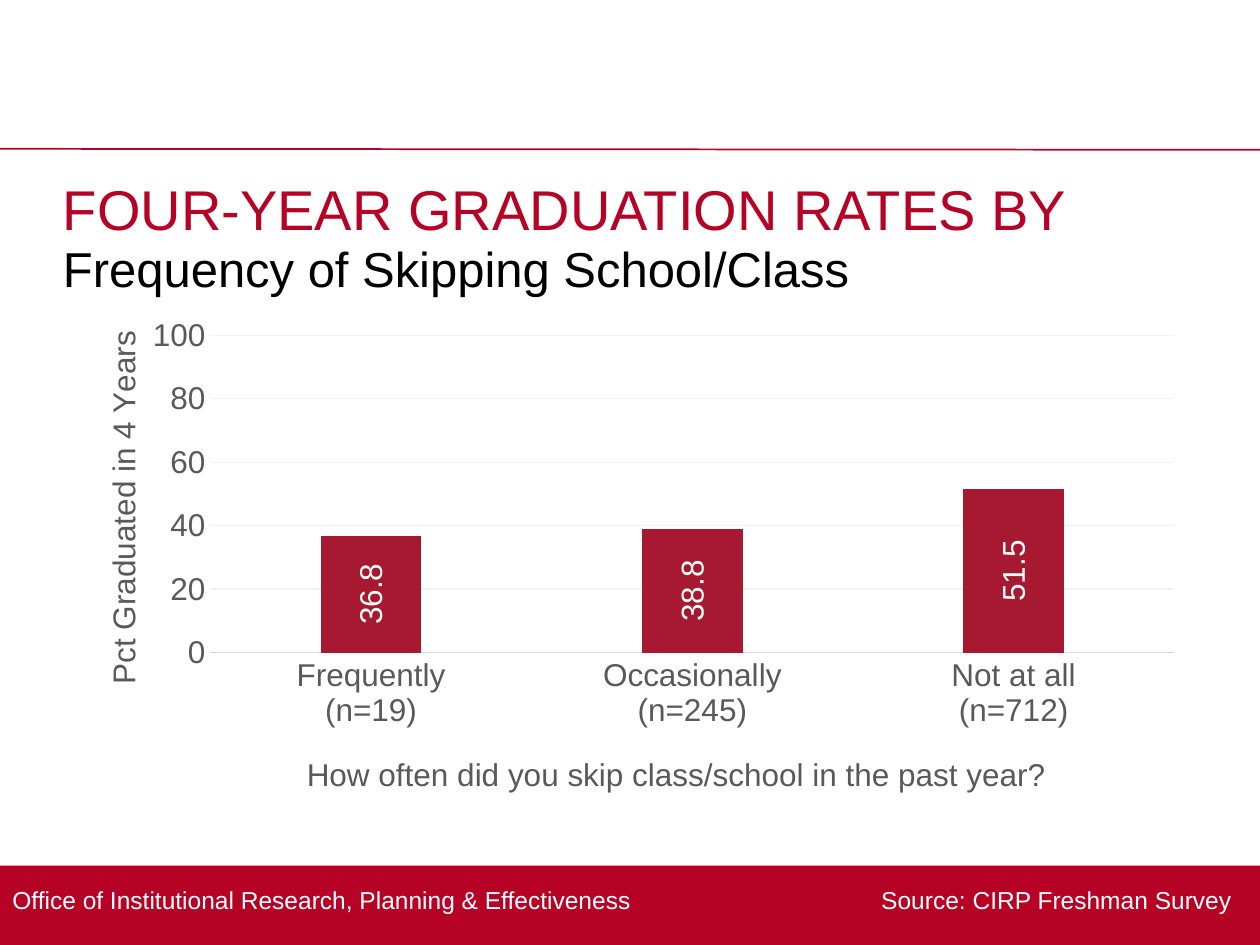
from pptx import Presentation
from pptx.chart.data import CategoryChartData
from pptx.dml.color import RGBColor
from pptx.enum.chart import XL_CHART_TYPE, XL_LABEL_POSITION, XL_TICK_MARK
from pptx.enum.shapes import MSO_CONNECTOR, MSO_SHAPE
from pptx.enum.text import MSO_ANCHOR
from pptx.oxml import parse_xml
from pptx.oxml.ns import nsdecls, qn
from pptx.util import Cm, Pt

COLUMN = XL_CHART_TYPE.COLUMN_CLUSTERED
CENTER = XL_LABEL_POSITION.CENTER
NO_TICK = XL_TICK_MARK.NONE
LINE = MSO_CONNECTOR.STRAIGHT
RECT = MSO_SHAPE.RECTANGLE
MIDDLE = MSO_ANCHOR.MIDDLE

HUES = {"red": "B60225", "bar": "A71930", "black": "000000", "white": "FFFFFF",
        "gray": "595959", "axis": "D9D9D9", "grid": "F2F2F2"}
HUES = {name: RGBColor.from_string(code) for name, code in HUES.items()}
TURN = "-5400000"


def style(font, size, hue):
    font.name = "Arial"
    font.size = Pt(size)
    font.bold = False
    font.color.rgb = HUES[hue]


def layout(spot, target=""):
    parts = "".join(f'<c:{key}Mode val="edge"/>' for key in "xy")
    parts += "".join(f'<c:{key} val="{val}"/>' for key, val in spot.items())
    return parse_xml(f'<c:layout {nsdecls("c")}><c:manualLayout>'
                     f'{target}{parts}</c:manualLayout></c:layout>')


deck = Presentation()
deck.slide_width, deck.slide_height = Cm(25.4), Cm(19.05)
slide = deck.slides.add_slide(deck.slide_layouts[6])
shapes = slide.shapes

band = shapes.add_shape(RECT, 0, Cm(17.45), Cm(25.4), Cm(1.6))
band.shadow.inherit = False
band.fill.solid()
band.fill.fore_color.rgb = HUES["red"]
band.line.fill.background()

rule = shapes.add_connector(LINE, 0, Cm(3), Cm(25.4), Cm(3.02))
rule.line.color.rgb = HUES["red"]
rule.line.width = Pt(1)
rule._element.spPr.append(parse_xml(f'<a:effectLst {nsdecls("a")}/>'))

foot = shapes.add_textbox(0, Cm(17.48), Cm(25.4), Cm(1.3))
frame = foot.text_frame
frame.word_wrap = True
frame.vertical_anchor = MIDDLE
para = frame.paragraphs[0]
para.text = ("Office of Institutional Research, Planning & Effectiveness"
             "\tSource: CIRP Freshman Survey")
para._p.get_or_add_pPr().append(parse_xml(
    f'<a:tabLst {nsdecls("a")}><a:tab pos="{Cm(24.58)}" algn="r"/></a:tabLst>'))
for run in para.runs:
    style(run.font, 14, "white")

for words, top, high, inset, size, hue in (
    ("Frequency of Skipping School/Class", 4.7, 1.14, 0.11, 28, "black"),
    ("FOUR-YEAR GRADUATION RATES BY", 3.28, 2.2, 0.24, 32, "red"),
):
    box = shapes.add_textbox(Cm(1.27), Cm(top), Cm(22.86), Cm(high))
    frame = box.text_frame
    frame.word_wrap = True
    frame.margin_left = frame.margin_right = frame.margin_bottom = 0
    frame.margin_top = Cm(inset)
    frame.text = words
    style(frame.paragraphs[0].runs[0].font, size, hue)

data = CategoryChartData(number_format="#,##0.0")
data.categories = ["Frequently\n(n=19)", "Occasionally\n(n=245)", "Not at all\n(n=712)"]
data.add_series("Series 1", [36.8, 38.8, 51.5])
chart = shapes.add_chart(COLUMN, Cm(1.27), Cm(6.25), Cm(22.86), Cm(10.16), data).chart
chart.has_legend = False
chart.has_title = False
style(chart.font, 18, "black")

plot = chart.plots[0]
plot.gap_width = 219
plot.overlap = -27
plot.vary_by_categories = False
bars = plot.series[0]
bars.format.fill.solid()
bars.format.fill.fore_color.rgb = HUES["bar"]

marks = bars.data_labels
marks.show_value = True
marks.position = CENTER
marks.number_format = "#,##0.0"
marks.number_format_is_linked = False
style(marks.font, 18, "white")
body = marks._element.find(".//" + qn("a:bodyPr"))
body.set("rot", TURN)
body.set("vert", "horz")

cats, vals = chart.category_axis, chart.value_axis
for axis, words, spot in (
    (cats, "How often did you skip class/school in the past year?", {"x": 0.21, "y": 0.87}),
    (vals, "Pct Graduated in 4 Years", {"x": 0.03, "y": 0.03}),
):
    axis.major_tick_mark = axis.minor_tick_mark = NO_TICK
    style(axis.tick_labels.font, 18, "gray")
    title = axis.axis_title
    title.text_frame.text = words
    style(title.text_frame.paragraphs[0].runs[0].font, 18, "gray")
    node = title._element
    for old in node.findall(qn("c:layout")):
        node.remove(old)
    node.find(qn("c:tx")).addnext(layout(spot))

body = vals.axis_title._element.find(".//" + qn("a:bodyPr"))
body.set("rot", TURN)
body.set("vert", "horz")
cats.format.line.color.rgb = HUES["axis"]
cats.format.line.width = Pt(0.75)
vals.format.line.fill.background()
vals.minimum_scale, vals.maximum_scale, vals.major_unit = 0, 100, 20
vals.tick_labels.number_format = "0"
vals.tick_labels.number_format_is_linked = False
grid = vals.major_gridlines.format.line
grid.color.rgb = HUES["grid"]
grid.width = Pt(0.75)

area = chart._chartSpace.chart.plotArea
for old in area.findall(qn("c:layout")):
    area.remove(old)
area.insert(0, layout({"x": 0.13, "y": 0.05, "w": 0.85, "h": 0.63},
                      '<c:layoutTarget val="inner"/>'))

deck.save("out.pptx")
